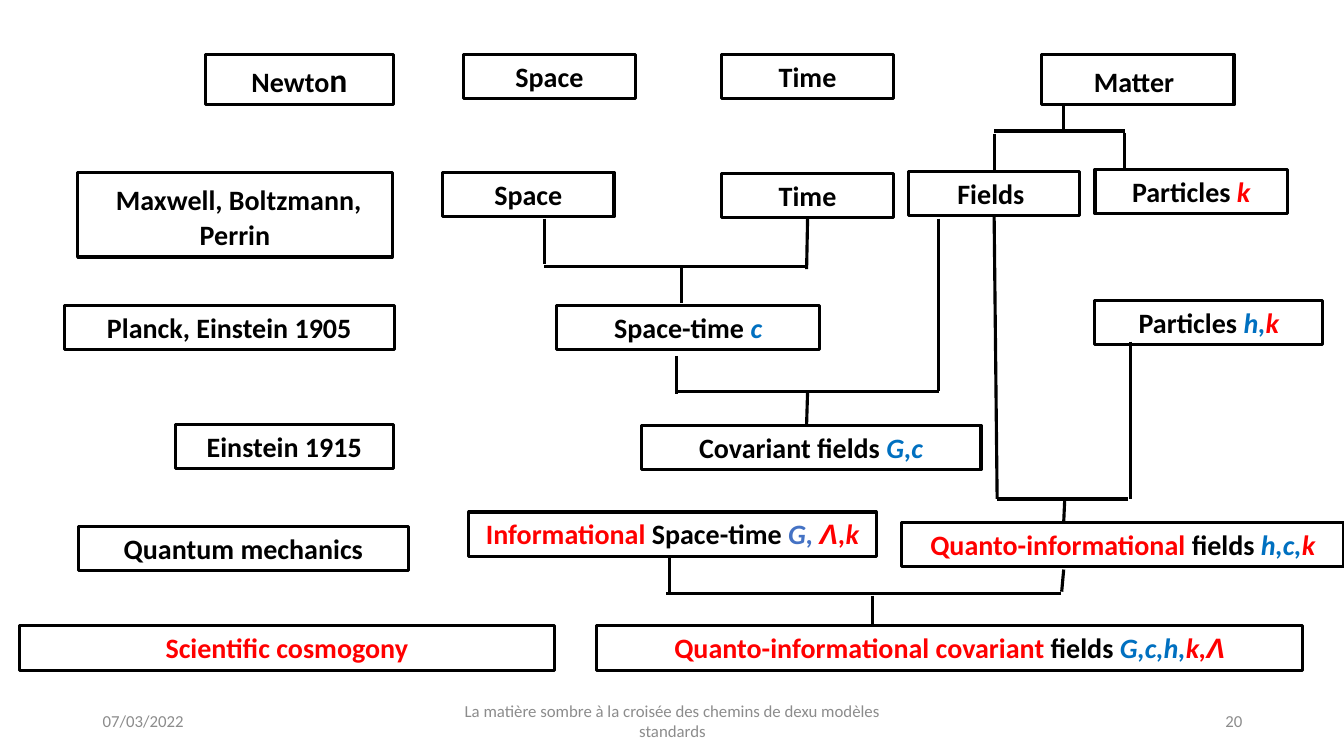
from dataclasses import dataclass

from lxml.etree import SubElement
from pptx import Presentation
from pptx.dml.color import RGBColor
from pptx.enum.shapes import MSO_CONNECTOR as Connector, MSO_SHAPE as Shape
from pptx.enum.text import MSO_ANCHOR as Anchor, MSO_AUTO_SIZE as AutoSize, PP_ALIGN as Align
from pptx.oxml.ns import qn
from pptx.util import Inches, Pt

TOP, BOTTOM = 0, 2
ROW_HEIGHT = 0.44


@dataclass(frozen=True)
class Theme:
    font: str = "Calibri"
    greek_font: str = "Arial"
    black: str = "000000"
    red: str = "FF0000"
    blue: str = "0070C0"
    pale_blue: str = "4472C4"
    grey: str = "8C8C8C"
    body: int = 20
    large: int = 24
    footer: int = 12
    stroke: float = 2.25


@dataclass(frozen=True)
class Part:
    """A piece of label text with its own look."""
    text: str
    color: str = Theme.black
    italic: bool = False
    size: int = Theme.body
    font: str = Theme.font


def constant(text, color=Theme.blue, font=Theme.font):
    return Part(text, color, italic=True, font=font)


def red(text):
    return Part(text, Theme.red)


class Diagram:
    def __init__(self, slide, theme):
        self.slide, self.theme = slide, theme

    def add_parts(self, paragraph, parts, bold):
        for part in parts:
            run = paragraph.add_run()
            run.text = part.text
            font = run.font
            font.name, font.size = part.font, Pt(part.size)
            font.bold, font.italic = bold, part.italic
            font.color.rgb = RGBColor.from_string(part.color)

    def box(self, left, top, width, *parts, height=ROW_HEIGHT):
        shape = self.slide.shapes.add_shape(
            Shape.RECTANGLE, Inches(left), Inches(top), Inches(width), Inches(height))
        shape.shadow.inherit = False
        shape.fill.background()
        shape.line.color.rgb = RGBColor.from_string(self.theme.black)
        shape.line.width = Pt(self.theme.stroke)
        frame = shape.text_frame
        frame.word_wrap = True
        frame.auto_size = AutoSize.SHAPE_TO_FIT_TEXT
        frame.vertical_anchor = Anchor.TOP
        frame.paragraphs[0].alignment = Align.CENTER
        parts = [Part(p) if isinstance(p, str) else p for p in parts]
        self.add_parts(frame.paragraphs[0], parts, bold=True)
        return shape

    def link(self, start, end, begin_at=None, end_at=None):
        """Draw a line; begin_at and end_at are (box, side) pairs to join."""
        line = self.slide.shapes.add_connector(
            Connector.STRAIGHT, *(Inches(v) for v in (*start, *end)))
        line.line.color.rgb = RGBColor.from_string(self.theme.black)
        line.line.width = Pt(self.theme.stroke)
        SubElement(line._element.spPr, qn("a:effectLst"))
        if begin_at:
            line.begin_connect(*begin_at)
        if end_at:
            line.end_connect(*end_at)

    def footer(self, left, width, text, alignment):
        field = self.slide.shapes.add_textbox(
            Inches(left), Inches(6.95), Inches(width), Inches(0.4))
        frame = field.text_frame
        frame.word_wrap = True
        frame.vertical_anchor = Anchor.MIDDLE
        frame.paragraphs[0].alignment = alignment
        part = Part(text, self.theme.grey, size=self.theme.footer)
        self.add_parts(frame.paragraphs[0], [part], bold=False)


def add_periods(diagram):
    large = Theme.large
    diagram.box(2.04, 0.54, 1.86, "Newto", Part("n", size=large), height=0.5)
    diagram.box(0.77, 1.71, 3.12, Part(" ", size=large), "Maxwell, Boltzmann, Perrin",
                height=0.84)
    diagram.box(0.64, 3.03, 3.27, "Planck, Einstein 1905")
    diagram.box(1.74, 4.21, 2.16, "Einstein 1915")
    diagram.box(0.78, 5.22, 3.27, "Quantum mechanics")
    diagram.box(0.19, 6.21, 5.31, red("Scientific cosmogony"))


def add_concepts(diagram):
    """Add the concept boxes and return those that links join."""
    box = diagram.box
    k = constant("k", Theme.red)
    box(4.6, 0.54, 1.7, "Space")
    box(7.16, 0.54, 1.7, "Time")
    box(10.33, 0.54, 1.91, "Matter", Part(" ", size=Theme.large), height=0.5)

    box(4.39, 1.71, 1.7, "Space")
    time = box(7.16, 1.72, 1.7, "Time")
    fields = box(9.01, 1.7, 1.7, "Fields ")
    box(10.86, 1.68, 1.91, "Particles ", k)

    box(5.52, 3.03, 2.61, "Space-time ", constant("c"))
    box(10.86, 2.98, 2.26, "Particles ", constant("h,"), k)

    box(6.36, 4.22, 3.37, "Covariant fields ", constant("G,c"))

    box(4.65, 5.08, 4.04, red("Informational "), "Space-time ",
        constant("G, ", Theme.pale_blue), constant("Λ", Theme.red, Theme.greek_font),
        constant(",k", Theme.red))
    box(8.94, 5.18, 4.39, red("Quanto-informational "), "fields ", constant("h,c,"), k)

    box(5.92, 6.21, 7, red("Quanto-informational covariant "), "fields ",
        constant("G,c,h,"), constant("k,", Theme.red),
        constant("Λ", Theme.red, Theme.greek_font))
    return time, fields


def add_links(diagram, time, fields):
    matter_split = [
        ((10.55, 1.03), (10.55, 1.31)),
        ((11.16, 1.3), (9.86, 1.3)),
        ((11.15, 1.32), (11.15, 1.68)),
    ]
    space_time_merge = [
        ((5.4, 2.17), (5.4, 2.62)),
        ((6.7, 2.64), (5.4, 2.64)),
        ((8, 2.64), (6.7, 2.64)),
        ((6.76, 2.64), (6.76, 3.01)),
    ]
    covariant_merge = [
        ((6.71, 3.53), (6.71, 3.91)),
        ((9.31, 2.17), (9.31, 3.88)),
        ((8.01, 3.88), (6.71, 3.88)),
        ((9.31, 3.88), (8.01, 3.88)),
        ((8.01, 3.88), (8, 4.21)),
    ]
    quantum_merge = [
        ((11.19, 4.95), (9.89, 4.95)),
        ((11.21, 3.39), (11.21, 4.95)),
        ((10.56, 4.96), (10.55, 5.18)),
    ]
    cosmogony_merge = [
        ((6.64, 5.51), (6.64, 5.89)),
        ((10.55, 5.65), (10.53, 5.87)),
        ((10.52, 5.89), (6.61, 5.89)),
        ((8.65, 5.91), (8.65, 6.21)),
    ]
    for group in (matter_split, space_time_merge, covariant_merge,
                  quantum_merge, cosmogony_merge):
        for start, end in group:
            diagram.link(start, end)

    diagram.link((9.86, 1.33), (9.86, 1.7), end_at=(fields, TOP))
    diagram.link((8.01, 2.16), (8, 2.67), begin_at=(time, BOTTOM))
    diagram.link((9.86, 2.14), (9.89, 4.95), begin_at=(fields, BOTTOM))


def main():
    deck = Presentation()
    deck.slide_width, deck.slide_height = Inches(13.33), Inches(7.5)
    blank = deck.slide_layouts[6]
    diagram = Diagram(deck.slides.add_slide(blank), Theme())

    diagram.footer(0.92, 3, "07/03/2022", Align.LEFT)
    diagram.footer(4.42, 4.5, "La matière sombre à la croisée des chemins de dexu modèles "
                   "standards", Align.CENTER)
    diagram.footer(9.42, 3, "20", Align.RIGHT)
    add_periods(diagram)
    time, fields = add_concepts(diagram)
    add_links(diagram, time, fields)
    deck.save("out.pptx")


if __name__ == "__main__":
    main()
